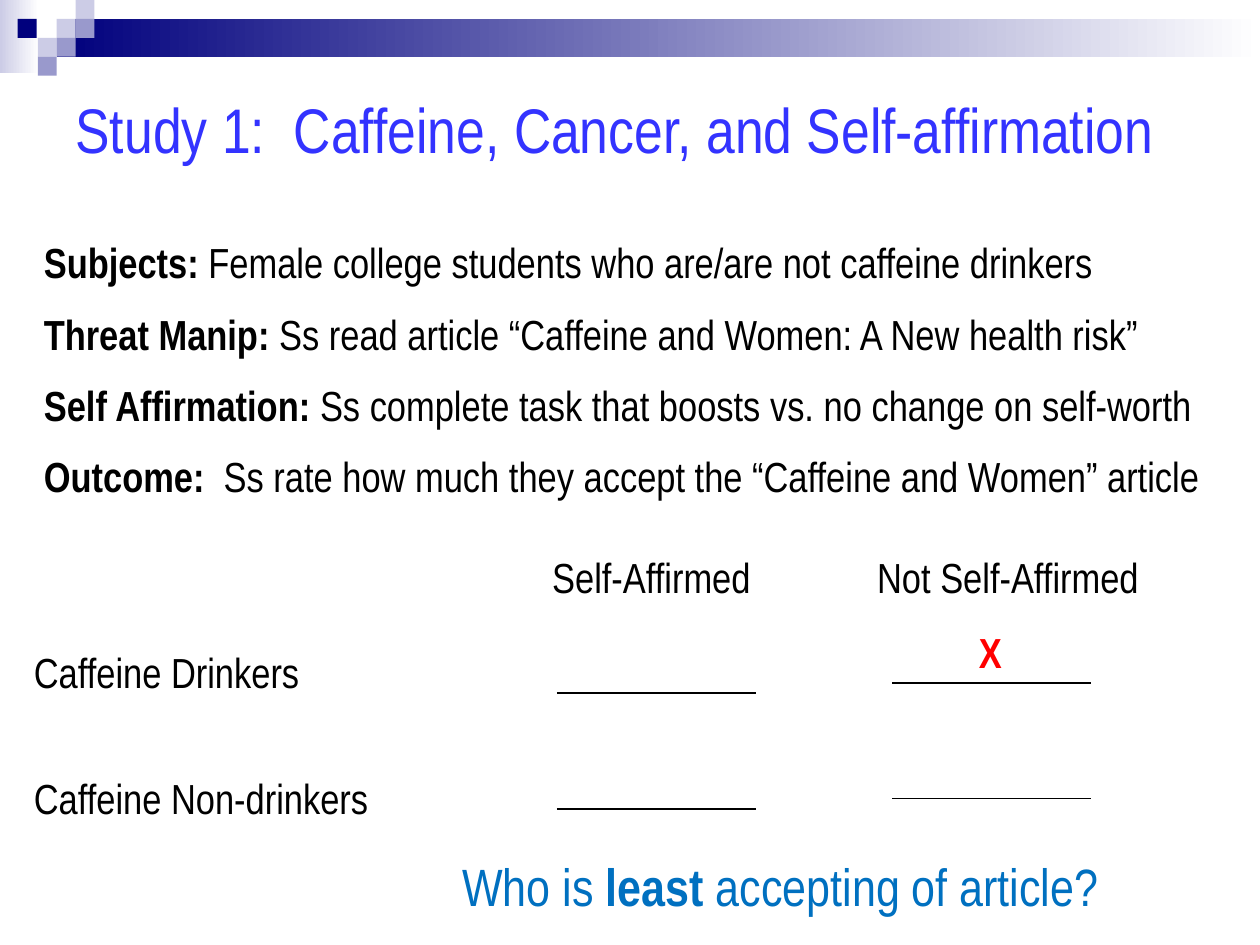
import pptx
import pptx.util
import pptx.dml.color
import pptx.enum.shapes
import pptx.enum.text
import pptx.oxml.ns
from lxml import etree

Inches = pptx.util.Inches
Pt = pptx.util.Pt
RGB = pptx.dml.color.RGBColor
Align = pptx.enum.text.PP_ALIGN
qn = pptx.oxml.ns.qn

NAVY = RGB(0x00, 0x00, 0x7D)
MID = RGB(0x99, 0x99, 0xCC)
PALE = RGB(0xCC, 0xCC, 0xE6)
WHITE = RGB(0xFF, 0xFF, 0xFF)
BLACK = RGB(0x00, 0x00, 0x00)
BLUE = RGB(0x33, 0x33, 0xFF)
TEAL = RGB(0x00, 0x70, 0xC0)
RED = RGB(0xFF, 0x00, 0x00)


class Deck:
    font = "Arial Narrow"
    size = 24

    def __init__(self):
        self.prs = pptx.Presentation()
        self.prs.slide_width = Inches(10)
        self.prs.slide_height = Inches(7.5)
        self.slide = self.prs.slides.add_slide(self.prs.slide_layouts[5])

    def rect(self, x, y, w, h, color, fade=False):
        """Add a borderless block; fade runs from color to white."""
        kind = pptx.enum.shapes.MSO_SHAPE.RECTANGLE
        box = self.slide.shapes.add_shape(
            kind, Inches(x), Inches(y), Inches(w), Inches(h))
        box.shadow.inherit = False
        box.line.fill.background()
        if fade:
            box.fill.gradient()
            box.fill.gradient_angle = 0
            for stop, tone in zip(box.fill.gradient_stops, (color, WHITE)):
                stop.color.rgb = tone
        else:
            box.fill.solid()
            box.fill.fore_color.rgb = color

    def fill(self, shape, paras, size, color, align):
        """Put text in a shape; a paragraph is a list of (text, bold) runs."""
        frame = shape.text_frame
        frame.word_wrap = True
        frame.auto_size = pptx.enum.text.MSO_AUTO_SIZE.SHAPE_TO_FIT_TEXT
        frame.vertical_anchor = pptx.enum.text.MSO_ANCHOR.TOP
        for i, runs in enumerate(paras):
            para = frame.add_paragraph() if i else frame.paragraphs[0]
            para.alignment = align
            para.font.name = self.font
            para.font.size = Pt(size)
            para.font.color.rgb = color
            self.space(para)
            for text, bold in runs:
                run = para.add_run()
                run.text = text
                run.font.bold = bold

    def space(self, para):
        """Set the space before to half a line."""
        para.space_before = Pt(0)
        gap = para._p.pPr.find(qn("a:spcBef"))
        gap.remove(gap[0])
        etree.SubElement(gap, qn("a:spcPct")).set("val", "50000")

    def title(self, x, y, w, h, text, size, color):
        head = self.slide.shapes.title
        head.left, head.top = Inches(x), Inches(y)
        head.width, head.height = Inches(w), Inches(h)
        self.fill(head, [[(text, False)]], size, color, Align.LEFT)

    def text(self, x, y, w, h, paras, size=size, color=BLACK,
             align=Align.LEFT):
        box = self.slide.shapes.add_textbox(
            Inches(x), Inches(y), Inches(w), Inches(h))
        self.fill(box, paras, size, color, align)

    def rule(self, x, y, w):
        kind = pptx.enum.shapes.MSO_CONNECTOR.STRAIGHT
        line = self.slide.shapes.add_connector(
            kind, Inches(x), Inches(y), Inches(x + w), Inches(y))
        line.line.color.rgb = BLACK
        line.line.width = Pt(0.75)
        etree.SubElement(line._element.spPr, qn("a:effectLst"))


def main():
    deck = Deck()

    deck.rect(0, 0, 0.31, 0.58, PALE, fade=True)
    deck.rect(0.45, 0.15, 9.55, 0.3, NAVY, fade=True)
    unit = 0.15
    tiles = [(3, 1, PALE), (4, 0, PALE), (4, 1, MID), (2, 2, PALE),
             (3, 2, MID), (2, 3, MID)]
    for col, row, color in tiles:
        deck.rect(col * unit, row * unit, unit, unit, color)
    deck.rect(0.14, unit, unit, unit, NAVY)

    deck.title(0.5, 0.67, 9.08, 0.7,
               "Study 1:  Caffeine, Cancer, and Self-affirmation", 36, BLUE)

    facts = [
        ("Subjects:",
         " Female college students who are/are not caffeine drinkers"),
        ("Threat Manip: ",
         "Ss read article “Caffeine and Women: A New health risk”"),
        ("Self Affirmation: ",
         "Ss complete task that boosts vs. no change on self-worth"),
        ("Outcome:",
         "  Ss rate how much they accept the “Caffeine and Women” article"),
    ]
    deck.text(0.25, 1.83, 9.5, 2.32,
              [[(name, True), (body, False)] for name, body in facts])

    for y, label in ((5.08, "Caffeine Drinkers"),
                     (6.08, "Caffeine Non-drinkers")):
        deck.text(0.17, y, 3, 0.5, [[(label, False)]])
    for x, label in ((3.67, "Self-Affirmed"), (6.5, "Not Self-Affirmed")):
        deck.text(x, 4.33, 3, 0.5, [[(label, False)]], align=Align.CENTER)

    ask = [("Who is ", False), ("least", True),
           (" accepting of article?", False)]
    deck.text(2.78, 6.73, 6.83, 0.61, [ask], 30, TEAL, Align.CENTER)

    for x, top in ((4.42, 5.5), (7.08, 5.42)):
        for y in (top, top + 0.92):
            deck.rule(x, y, 1.58)
    deck.text(7.67, 4.92, 0.5, 0.5, [[("X", True)]], color=RED)

    deck.prs.save("out.pptx")


if __name__ == "__main__":
    main()
